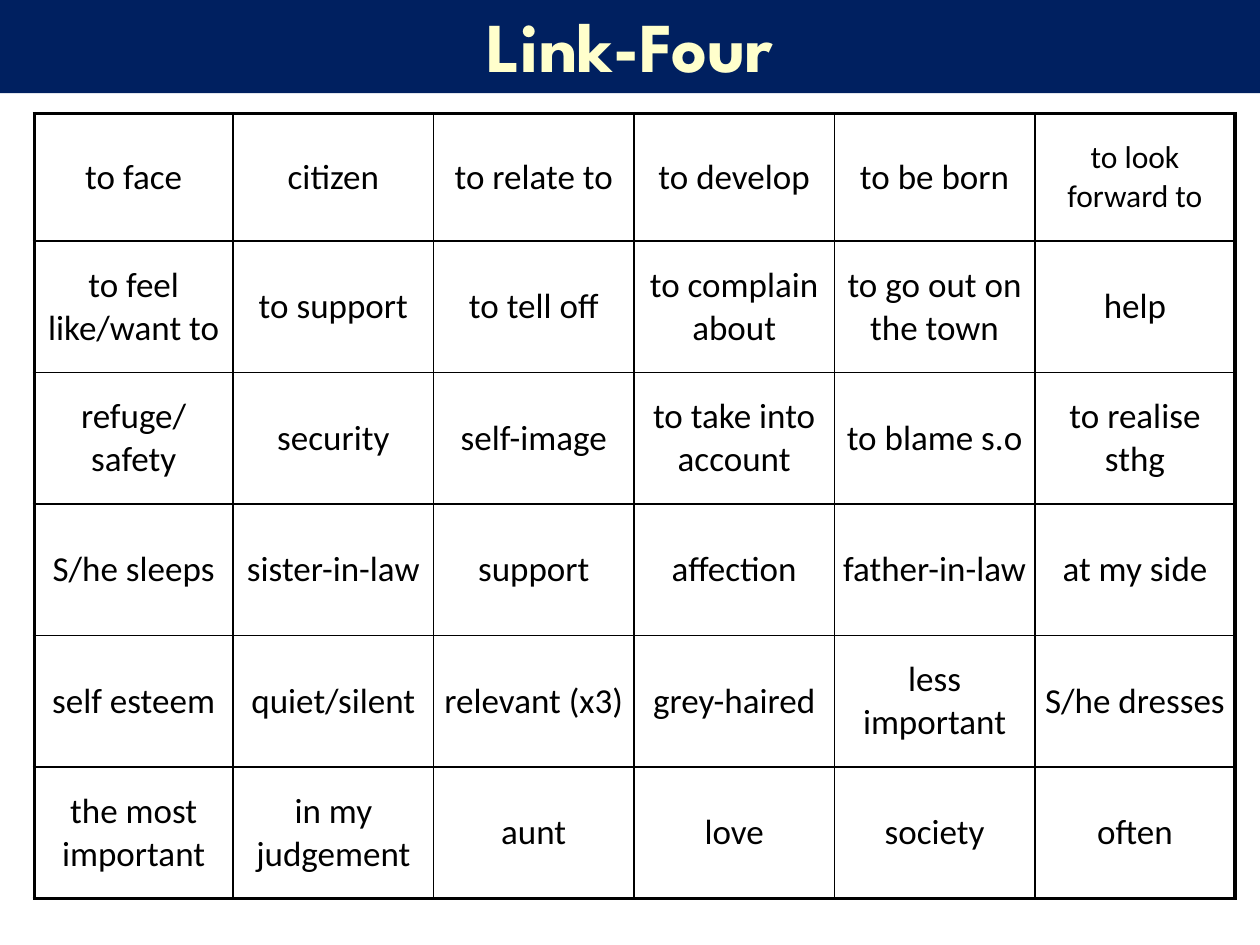
"""Build a Link-Four vocabulary grid slide."""
import pptx
import pptx.dml.color
import pptx.enum.shapes
import pptx.enum.text
import pptx.oxml.ns
import pptx.util
from lxml import etree
from pptx.util import Cm, Pt

TITLE = "Link-Four"
WORDS = [
    ["to face", "citizen", "to relate to", "to develop", "to be born", "to look forward to"],
    ["to feel like/want to", "to support", "to tell off", "to complain about",
     "to go out on the town", "help"],
    ["refuge/\nsafety", "security", "self-image", "to take into account",
     "to blame s.o", "to realise sthg"],
    ["S/he sleeps", "sister-in-law", "support", "affection", "father-in-law", "at my side"],
    ["self esteem", "quiet/silent", "relevant (x3)", "grey-haired",
     "less important", "S/he dresses"],
    ["the most important", "in my judgement", "aunt", "love", "society", "often"],
]
SMALLER_SIZES = {"to look forward to": 18}
NAVY, CREAM, BLACK = "002060", "FFFFCC", "000000"
WORD_SIZE = 20
OUTER_LINE, INNER_LINE = 2.25, 1
GRID_LEFT, GRID_TOP = 0.69, 2.29
FIRST_COLUMN, COLUMN = 4.01, 4.04
FIRST_ROW, ROW = 2.57, 2.65


def color(value):
    return pptx.dml.color.RGBColor.from_string(value)


def write(text_frame, text, font_name, size, hex_color, bold):
    paragraph = text_frame.paragraphs[0]
    paragraph.alignment = pptx.enum.text.PP_ALIGN.CENTER
    for index, line in enumerate(text.split("\n")):
        if index:
            paragraph.add_line_break()
        run = paragraph.add_run()
        run.text = line
        run.font.name = font_name
        run.font.size = Pt(size)
        run.font.bold = bold
        run.font.color.rgb = color(hex_color)


def set_border(cell, side, width):
    properties = cell._tc.get_or_add_tcPr()
    line = etree.SubElement(properties, pptx.oxml.ns.qn(f"a:ln{side}"), w=str(Pt(width)))
    fill = etree.SubElement(line, pptx.oxml.ns.qn("a:solidFill"))
    etree.SubElement(fill, pptx.oxml.ns.qn("a:srgbClr"), val=BLACK)


def add_title(slide, slide_width):
    shape = slide.shapes.add_shape(
        pptx.enum.shapes.MSO_SHAPE.RECTANGLE, 0, Cm(-0.08), slide_width, Cm(1.96))
    shape.shadow.inherit = False
    shape.fill.solid()
    shape.fill.fore_color.rgb = color(NAVY)
    shape.line.fill.background()
    shape.text_frame.word_wrap = True
    shape.text_frame.vertical_anchor = pptx.enum.text.MSO_ANCHOR.MIDDLE
    write(shape.text_frame, TITLE, "League Spartan", 40, CREAM, True)


def add_grid(slide):
    row_count, column_count = len(WORDS), len(WORDS[0])
    widths = [FIRST_COLUMN] + [COLUMN] * (column_count - 1)
    heights = [FIRST_ROW] + [ROW] * (row_count - 1)
    table = slide.shapes.add_table(
        row_count, column_count, Cm(GRID_LEFT), Cm(GRID_TOP),
        Cm(sum(widths)), Cm(sum(heights))).table
    table.first_row = table.horz_banding = False
    for column, width in zip(table.columns, widths):
        column.width = Cm(width)
    for row, height in zip(table.rows, heights):
        row.height = Cm(height)
    for row_index, words in enumerate(WORDS):
        for column_index, word in enumerate(words):
            cell = table.cell(row_index, column_index)
            cell.margin_left = cell.margin_right = Cm(0.15)
            cell.margin_top = cell.margin_bottom = Cm(0.13)
            cell.vertical_anchor = pptx.enum.text.MSO_ANCHOR.MIDDLE
            on_edge = {
                "L": column_index == 0,
                "R": column_index == column_count - 1,
                "T": row_index == 0,
                "B": row_index == row_count - 1,
            }
            for side, outer in on_edge.items():
                set_border(cell, side, OUTER_LINE if outer else INNER_LINE)
            cell.fill.background()
            size = SMALLER_SIZES.get(word, WORD_SIZE)
            write(cell.text_frame, word, "Calibri", size, BLACK, False)


def main():
    presentation = pptx.Presentation()
    presentation.slide_width, presentation.slide_height = Cm(25.4), Cm(19.05)
    slide = presentation.slides.add_slide(presentation.slide_layouts[6])
    add_title(slide, presentation.slide_width)
    add_grid(slide)
    presentation.save("out.pptx")


if __name__ == "__main__":
    main()
